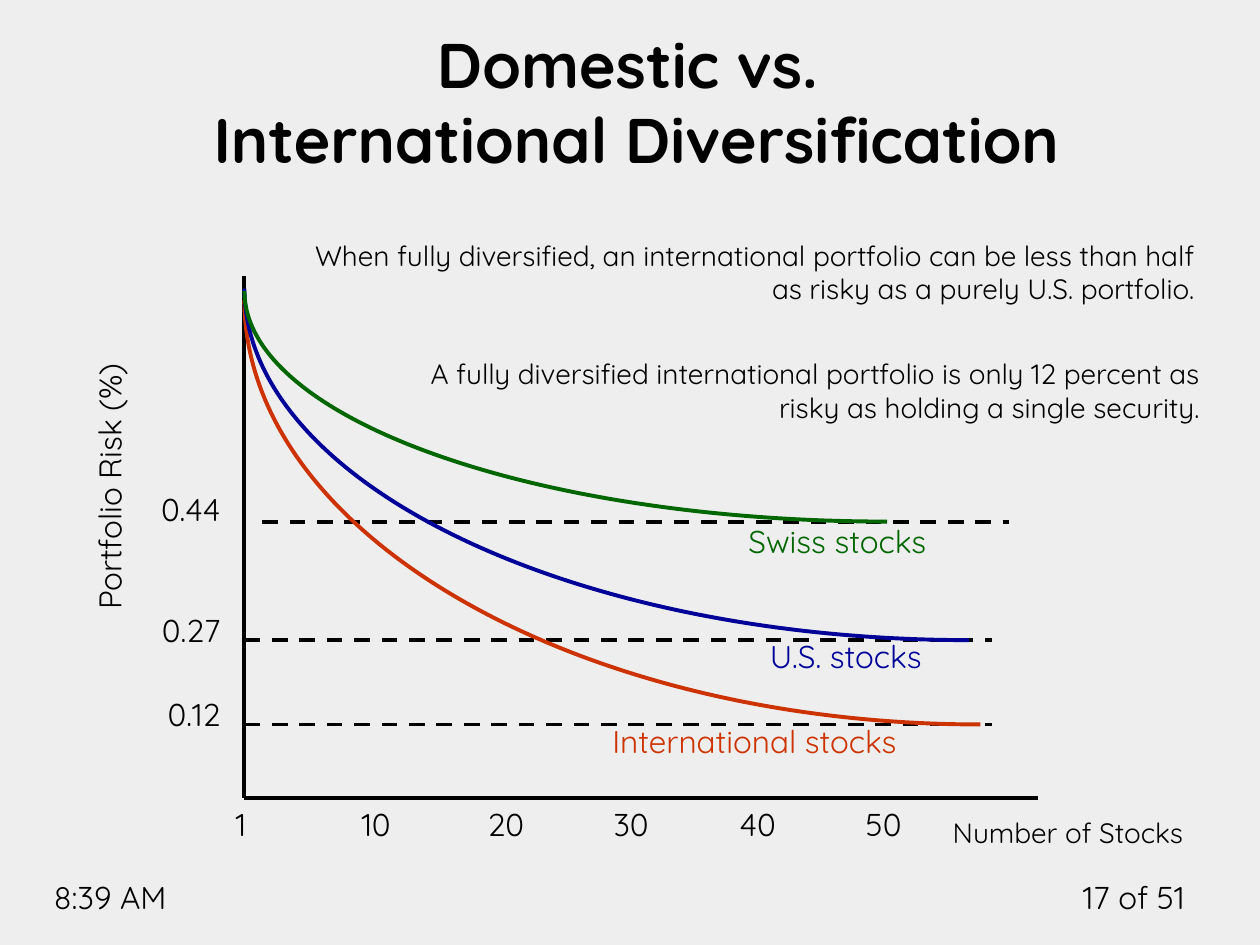
from pptx import Presentation
from pptx.dml.color import RGBColor
from pptx.enum.dml import MSO_LINE
from pptx.enum.shapes import MSO_CONNECTOR
from pptx.enum.text import MSO_ANCHOR, MSO_AUTO_SIZE, PP_ALIGN
from pptx.oxml.ns import qn
from pptx.util import Inches, Pt
from lxml.etree import SubElement

BLACK, GREEN, BLUE, RED = "000000", "006600", "000099", "CC3300"
RIGHT = PP_ALIGN.RIGHT
ARC_PULL = 0.55  # Bezier handle length for a quarter ellipse


def color(value):
    return RGBColor.from_string(value)


def write(para, text, size=18, fill=BLACK, bold=False, align=PP_ALIGN.LEFT, tabs=()):
    """Fill a paragraph with text and format it."""
    para.text = text
    para.alignment = align
    if tabs:
        tab_list = SubElement(para._p.get_or_add_pPr(), qn("a:tabLst"))
        for stop in tabs:
            SubElement(tab_list, qn("a:tab"), pos=str(Inches(stop)), algn="l")
    for span in para.runs:
        span.font.name = "Quicksand"
        span.font.size = Pt(size)
        span.font.bold = bold
        span.font.color.rgb = color(fill)


class Page:
    """The current slide and its drawing style."""

    line_width = Pt(2.25)

    def __init__(self, deck, background):
        self.slide = deck.slides.add_slide(deck.slide_layouts[5])
        self.slide.background.fill.solid()
        self.slide.background.fill.fore_color.rgb = color(background)

    def title(self, text, left, top, width, height):
        box = self.slide.shapes.title
        box.left, box.top = Inches(left), Inches(top)
        box.width, box.height = Inches(width), Inches(height)
        frame = box.text_frame
        frame.auto_size = MSO_AUTO_SIZE.NONE
        frame.vertical_anchor = MSO_ANCHOR.BOTTOM
        write(frame.paragraphs[0], text, size=36, bold=True, align=PP_ALIGN.CENTER)

    def text(self, text, left, top, width, height=0.42, inset=(0.11, 0.06),
             rotation=0, **style):
        box = self.slide.shapes.add_textbox(
            Inches(left), Inches(top), Inches(width), Inches(height))
        box.rotation = rotation
        frame = box.text_frame
        frame.word_wrap = True
        frame.margin_left = frame.margin_right = Inches(inset[0])
        frame.margin_top = frame.margin_bottom = Inches(inset[1])
        write(frame.paragraphs[0], text, **style)

    def line(self, x1, y1, x2, y2, dashed=False):
        line = self.slide.shapes.add_connector(
            MSO_CONNECTOR.STRAIGHT, Inches(x1), Inches(y1), Inches(x2), Inches(y2))
        line.line.width = self.line_width
        line.line.color.rgb = color(BLACK)
        if dashed:
            line.line.dash_style = MSO_LINE.DASH
        SubElement(line._element.spPr, qn("a:effectLst"))

    def curve(self, left, top, right, bottom, stroke):
        """Draw the lower-left quarter of an ellipse centred at right, top."""
        builder = self.slide.shapes.build_freeform(Inches(right), Inches(bottom))
        builder.add_line_segments([(Inches(left), Inches(top))], close=False)
        shape = builder.convert_to_shape()
        # Bend the straight segment into one Bezier curve
        segment = next(shape._element.iter(qn("a:lnTo")))
        outline = segment.getparent()
        outline.remove(segment)
        bend = SubElement(outline, qn("a:cubicBezTo"))
        width, height = shape.width, shape.height
        for x, y in ((width * (1 - ARC_PULL), height), (0, height * ARC_PULL), (0, 0)):
            SubElement(bend, qn("a:pt"), x=str(round(x)), y=str(round(y)))
        shape.shadow.inherit = False
        shape.fill.background()
        shape.line.width = self.line_width
        shape.line.color.rgb = color(stroke)


def main():
    deck = Presentation()
    deck.slide_width, deck.slide_height = Inches(10), Inches(7.5)
    page = Page(deck, "EEEEEE")

    # Footer and title
    page.text("17 of 51", 8.33, 6.92, 1.17, 0.4, inset=(0.1, 0.05), align=RIGHT)
    page.text("8:39 AM", 0.33, 6.92, 1.58, 0.4, inset=(0.1, 0.05))
    page.title("Domestic vs. \vInternational Diversification", 0.55, 0.2, 9, 1.25)

    # Axes
    axis_x, axis_y = 1.94, 6.33
    page.line(axis_x, axis_y, axis_x, 2.19)
    page.line(axis_x, axis_y, 8.24, axis_y)

    # Risk floors with their values
    for value, label_top, start, level in (
            ("0.44", 3.83, 2.08, 4.14),
            ("0.27", 4.79, axis_x, 5.08),
            ("0.12", 5.46, axis_x, 5.75)):
        page.line(start, level, start + 5.93, level, dashed=True)
        page.text(value, 0.93, label_top, 0.93, align=RIGHT)

    # Axis labels
    page.text("Portfolio Risk (%)", -0.72, 4.15, 3.17, rotation=270, align=RIGHT)
    page.text("Number of Stocks", 7.36, 6.41, 2.14, 0.38, size=16, align=RIGHT)
    page.text("1\t10\t20\t30\t40\t50", 1.76, axis_y, 6.3, tabs=range(1, 6))

    # Risk curves
    for top, right, bottom, stroke in (
            (2.38, 7.78, 5.75, RED),
            (2.29, 7.69, 5.08, BLUE),
            (2.31, 7.04, 4.14, GREEN)):
        page.curve(axis_x, top, right, bottom, stroke)

    # Curve names
    page.text("Swiss stocks", 5.83, 4.08, 2.5, fill=GREEN)
    page.text("U.S. stocks", 6, 5, 2.5, fill=BLUE)
    page.text("International stocks", 4.75, 5.67, 3.43, fill=RED)

    # Comments
    page.text("When fully diversified, an international portfolio can be less than half "
              "as risky as a purely U.S. portfolio.",
              2.18, 1.83, 7.41, 0.65, size=16, align=RIGHT)
    page.text("A fully diversified international portfolio is only 12 percent as "
              "risky as holding a single security.",
              2.82, 2.77, 6.81, 0.65, size=16, align=RIGHT)

    deck.save("out.pptx")


if __name__ == "__main__":
    main()
